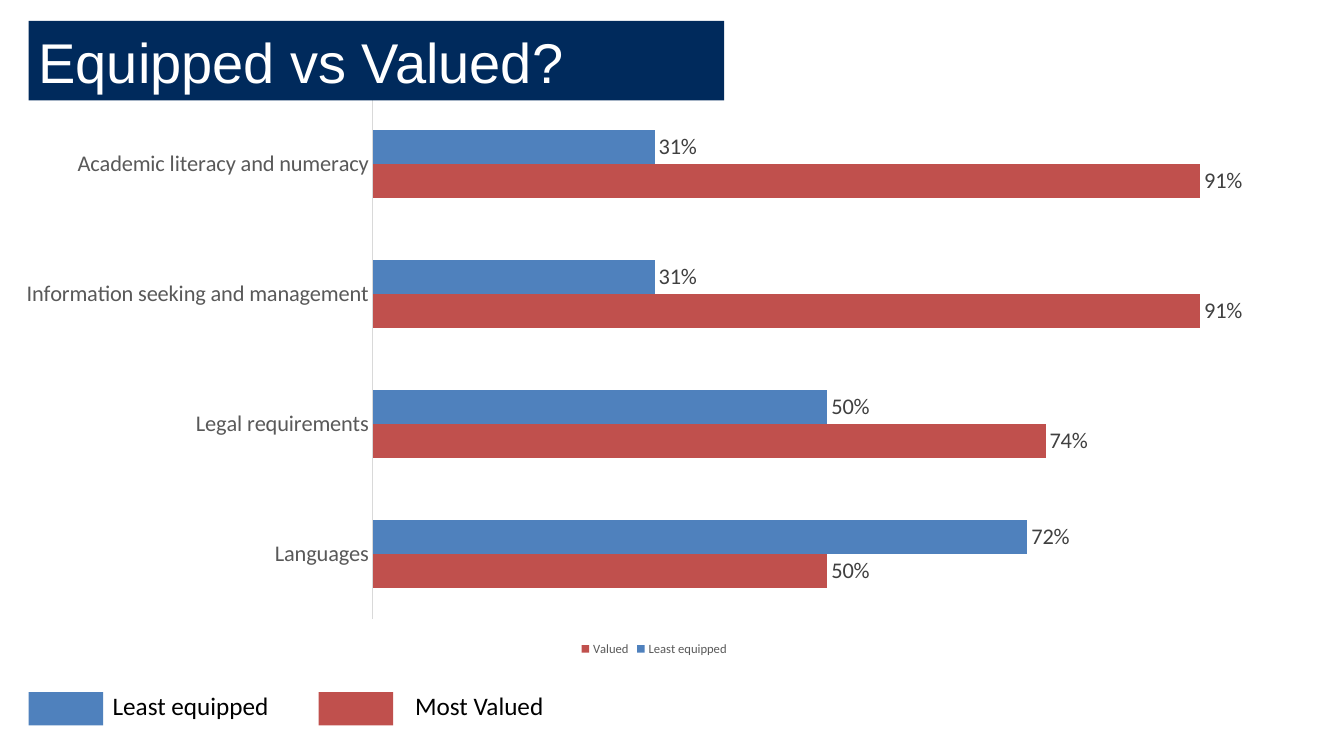
"""Build the slide comparing how equipped and how valued each skill is."""
from dataclasses import dataclass

import lxml.etree
import pptx
import pptx.chart.data
import pptx.dml.color
import pptx.enum.chart
import pptx.enum.shapes
import pptx.enum.text
import pptx.oxml
import pptx.oxml.ns
import pptx.util
from pptx.util import Cm

RGB = pptx.dml.color.RGBColor.from_string


@dataclass(frozen=True)
class Theme:
    navy: str = "002A5C"
    blue: str = "4F81BD"
    red: str = "C0504D"
    white: str = "FFFFFF"
    black: str = "000000"
    axis_text: str = "595959"
    label_text: str = "404040"
    axis_line: str = "D9D9D9"
    heading_font: str = "Arial"
    body_font: str = "Calibri"
    heading_size: int = 40
    key_size: int = 18
    chart_size: int = 16
    legend_size: int = 9


THEME = Theme()
SKILLS = ("Academic literacy and numeracy", "Information seeking and management",
          "Legal requirements", "Languages")
RATINGS = (("Least equipped", (0.31, 0.31, 0.50, 0.72), THEME.blue),
           ("Valued", (0.91, 0.91, 0.74, 0.50), THEME.red))
PLOT_AREA = {"x": 0.285, "y": 0.02, "w": 0.695, "h": 0.908}
KEY_TABS = (5.08, 7.62)


def style_font(font, size, color, name=THEME.body_font):
    font.size = pptx.util.Pt(size)
    font.name = name
    font.bold = False
    font.color.rgb = RGB(color)


def add_tab_stops(paragraph, stops):
    qn = pptx.oxml.ns.qn
    tab_list = lxml.etree.SubElement(paragraph._p.get_or_add_pPr(), qn("a:tabLst"))
    for stop in stops:
        lxml.etree.SubElement(tab_list, qn("a:tab"), pos=str(int(Cm(stop))), algn="l")


def add_text(frame, wording, size, color, name=THEME.body_font, stops=()):
    paragraph = frame.paragraphs[0]
    paragraph.alignment = pptx.enum.text.PP_ALIGN.LEFT
    if stops:
        add_tab_stops(paragraph, stops)
    run = paragraph.add_run()
    run.text = wording
    style_font(run.font, size, color, name)


def add_block(shapes, left, top, width, height, color):
    block = shapes.add_shape(pptx.enum.shapes.MSO_SHAPE.RECTANGLE,
                             Cm(left), Cm(top), Cm(width), Cm(height))
    block.shadow.inherit = False
    block.fill.solid()
    block.fill.fore_color.rgb = RGB(color)
    block.line.fill.background()
    return block


def add_heading(slide, wording):
    banner = add_block(slide.shapes, 0.72, 0.53, 17.53, 2.0, THEME.navy)
    banner.text_frame.word_wrap = True
    banner.text_frame.vertical_anchor = pptx.enum.text.MSO_ANCHOR.MIDDLE
    add_text(banner.text_frame, wording, THEME.heading_size, THEME.white, THEME.heading_font)


def add_key(slide):
    key = slide.shapes.add_group_shape()
    labels = key.shapes.add_textbox(Cm(2.59), Cm(17.27), Cm(14.6), Cm(1.02))
    labels.text_frame.word_wrap = True
    add_text(labels.text_frame, "Least equipped\t\tMost Valued",
             THEME.key_size, THEME.black, stops=KEY_TABS)
    for left, color in ((0.72, THEME.blue), (8.03, THEME.red)):
        add_block(key.shapes, left, 17.44, 1.88, 0.84, color)


def place_plot(chart):
    modes = '<c:xMode val="edge"/><c:yMode val="edge"/>'
    extents = "".join(f'<c:{side} val="{share}"/>' for side, share in PLOT_AREA.items())
    layout = pptx.oxml.parse_xml(
        f'<c:layout {pptx.oxml.ns.nsdecls("c")}><c:manualLayout>'
        f'<c:layoutTarget val="inner"/>{modes}{extents}</c:manualLayout></c:layout>')
    plot_area = chart.plots[0]._element.getparent()
    for previous in plot_area.findall(pptx.oxml.ns.qn("c:layout")):
        plot_area.remove(previous)
    plot_area.insert(0, layout)


def style_axes(chart):
    skills = chart.category_axis
    skills.reverse_order = True
    skills.major_tick_mark = pptx.enum.chart.XL_TICK_MARK.NONE
    skills.format.line.color.rgb = RGB(THEME.axis_line)
    skills.format.line.width = pptx.util.Pt(0.75)
    style_font(skills.tick_labels.font, THEME.chart_size, THEME.axis_text)
    share = chart.value_axis
    share.minimum_scale, share.maximum_scale = 0, 1
    share.has_major_gridlines = False
    share.visible = False


def style_series(series, color):
    series.invert_if_negative = False
    series.format.fill.solid()
    series.format.fill.fore_color.rgb = RGB(color)
    labels = series.data_labels
    labels.show_value = True
    labels.number_format = "0%"
    labels.number_format_is_linked = False
    labels.position = pptx.enum.chart.XL_LABEL_POSITION.OUTSIDE_END
    style_font(labels.font, THEME.chart_size, THEME.label_text)


def add_ratings_chart(slide):
    ratings = pptx.chart.data.CategoryChartData(number_format="0%")
    ratings.categories = SKILLS
    for name, shares, _ in RATINGS:
        ratings.add_series(name, shares)
    chart = slide.shapes.add_chart(
        pptx.enum.chart.XL_CHART_TYPE.BAR_CLUSTERED,
        Cm(0), Cm(2.21), Cm(32.97), Cm(14.43), ratings).chart
    chart.has_title = False
    style_font(chart.font, 10, THEME.black)
    bars = chart.plots[0]
    bars.vary_by_categories = False
    bars.gap_width = 182
    bars.overlap = 0
    for series, (_, _, color) in zip(bars.series, RATINGS):
        style_series(series, color)
    style_axes(chart)
    place_plot(chart)
    chart.has_legend = True
    chart.legend.position = pptx.enum.chart.XL_LEGEND_POSITION.BOTTOM
    chart.legend.include_in_layout = False
    style_font(chart.legend.font, THEME.legend_size, THEME.axis_text)


def main():
    deck = pptx.Presentation()
    deck.slide_width, deck.slide_height = Cm(33.87), Cm(19.05)
    slide = deck.slides.add_slide(deck.slide_layouts[6])
    add_ratings_chart(slide)
    add_key(slide)
    add_heading(slide, "Equipped vs Valued?")
    deck.save("out.pptx")


if __name__ == "__main__":
    main()
